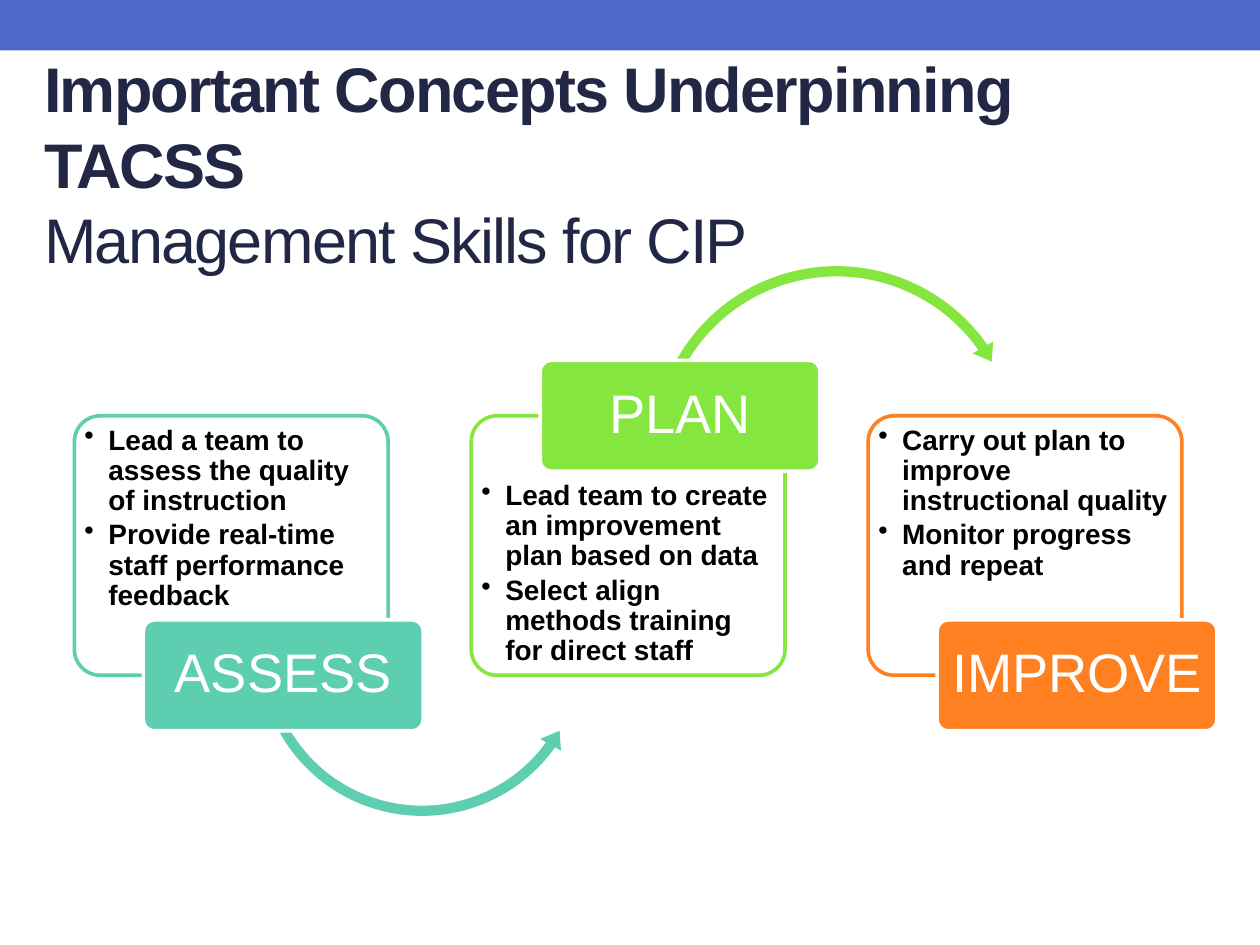
from pptx import Presentation
from pptx.dml.color import RGBColor
from pptx.enum.shapes import MSO_SHAPE
from pptx.enum.text import MSO_ANCHOR, MSO_AUTO_SIZE, PP_ALIGN
from pptx.oxml.ns import qn
from pptx.util import Inches, Pt
from lxml import etree

RECT, ROUNDED = MSO_SHAPE.RECTANGLE, MSO_SHAPE.ROUNDED_RECTANGLE
ARC_DOWN, ARC_UP = MSO_SHAPE.LEFT_CIRCULAR_ARROW, MSO_SHAPE.CIRCULAR_ARROW
TOP, MIDDLE = MSO_ANCHOR.TOP, MSO_ANCHOR.MIDDLE
LEFT, CENTER = PP_ALIGN.LEFT, PP_ALIGN.CENTER

BLUE = RGBColor(0x4E, 0x67, 0xC8)
NAVY = RGBColor(0x21, 0x27, 0x45)
TEAL = RGBColor(0x5D, 0xCE, 0xAF)
GREEN = RGBColor(0x86, 0xE6, 0x40)
ORANGE = RGBColor(0xFF, 0x80, 0x21)
WHITE = RGBColor(0xFF, 0xFF, 0xFF)
BLACK = RGBColor(0, 0, 0)

FONT = "Arial"
FIRST_X, PANEL_Y, PITCH = 0.59, 3.3, 3.15
PANEL_W, PANEL_H = 2.49, 2.06
LABEL_W, LABEL_H = 2.22, 0.88
LABEL_DX = 0.22 * PANEL_W

# name, colour, label above the panel, bullets,
# arrow: shape, offset from the panel's left and top, size, adjustments
STEPS = [
    ("ASSESS", TEAL, False,
     ["Lead a team to assess the quality of instruction",
      "Provide real-time staff performance feedback"],
     (ARC_DOWN, 1.41, 0.53, 2.7, (0.03, 3.635, 21.39, 90.245, 0.035))),
    ("PLAN", GREEN, True,
     ["Lead team to create an improvement plan based on data",
      "Select align methods training for direct staff"],
     (ARC_UP, 1.39, -1.24, 3.02, (0.027, 3.227, 195.018, 125.755, 0.031))),
    ("IMPROVE", ORANGE, False,
     ["Carry out plan to improve instructional quality",
      "Monitor progress and repeat"],
     None),
]


def add_box(slide, kind, box, fill, line=None, adjustments=()):
    sp = slide.shapes.add_shape(kind, *(Inches(v) for v in box))
    sp.shadow.inherit = False
    sp.fill.solid()
    sp.fill.fore_color.rgb = fill
    if line is None:
        sp.line.fill.background()
    else:
        sp.line.color.rgb = line
        sp.line.width = Pt(2.08)
    for i, value in enumerate(adjustments):
        sp.adjustments[i] = value
    return sp


def set_frame(sp, anchor, side, top):
    tf = sp.text_frame
    tf.word_wrap = True
    tf.vertical_anchor = anchor
    tf.margin_left = tf.margin_right = Inches(side)
    tf.margin_top, tf.margin_bottom = Inches(top), 0
    return tf


def add_run(p, text, size, color, bold=False):
    r = p.add_run()
    r.text = text
    r.font.name, r.font.size, r.font.bold = FONT, Pt(size), bold
    r.font.color.rgb = color
    return r


def add_bullet(p):
    pPr = p._p.get_or_add_pPr()
    pPr.set("marL", str(Inches(0.19)))
    pPr.set("indent", str(-Inches(0.19)))
    etree.SubElement(pPr, qn("a:buChar")).set("char", "•")


def add_title(slide, box):
    title = slide.shapes.title
    title.left, title.top, title.width, title.height = map(Inches, box)
    tf = title.text_frame
    tf.auto_size = MSO_AUTO_SIZE.NONE
    tf.word_wrap = True
    tf.vertical_anchor = MIDDLE
    p = tf.paragraphs[0]
    p.alignment = LEFT
    heading = add_run(p, "Important Concepts Underpinning TACSS", 36, NAVY, True)
    p.add_line_break()
    subject = add_run(p, "Management Skills for CIP", 36, NAVY)
    for r in (heading, subject):
        r.font._element.set("spc", "-100")


def add_panel(slide, box, color, bullets, text_top):
    sp = add_box(slide, ROUNDED, box, WHITE, color, [0.1])
    alpha = etree.SubElement(sp.fill._xPr.find(qn("a:solidFill"))[0], qn("a:alpha"))
    alpha.set("val", "90000")
    tf = set_frame(sp, TOP, 0.02, text_top)
    for i, text in enumerate(bullets):
        p = tf.add_paragraph() if i else tf.paragraphs[0]
        p.alignment = LEFT
        p.line_spacing, p.space_after = 0.9, Pt(2.4)
        add_bullet(p)
        add_run(p, text, 16, BLACK, True)


def add_label(slide, box, color, name):
    sp = add_box(slide, ROUNDED, box, color, WHITE, [0.1])
    p = set_frame(sp, MIDDLE, 0.06, 0).paragraphs[0]
    p.alignment = CENTER
    p.line_spacing = 0.9
    add_run(p, name, 31, WHITE)


def add_step(slide, x, y, step):
    """Panel, arrow to the next step and label, from the panel's corner."""
    name, color, label_above, bullets, arrow = step
    add_panel(slide, (x, y, PANEL_W, PANEL_H), color, bullets,
              LABEL_H / 2 + 0.02 if label_above else 0.02)
    if arrow:
        kind, dx, dy, size, adjustments = arrow
        add_box(slide, kind, (x + dx, y + dy, size, size), color,
                adjustments=adjustments)
    edge = y if label_above else y + PANEL_H
    add_label(slide, (x + LABEL_DX, edge - LABEL_H / 2, LABEL_W, LABEL_H),
              color, name)


def main():
    prs = Presentation()
    prs.slide_width, prs.slide_height = Inches(10), Inches(7.5)
    slide = prs.slides.add_slide(prs.slide_layouts[5])
    add_box(slide, RECT, (0, 0, 10, 0.4), BLUE)
    add_title(slide, (0.25, 0.42, 9.5, 1.75))
    for i, step in enumerate(STEPS):
        add_step(slide, FIRST_X + i * PITCH, PANEL_Y, step)
    prs.save("out.pptx")


if __name__ == "__main__":
    main()
